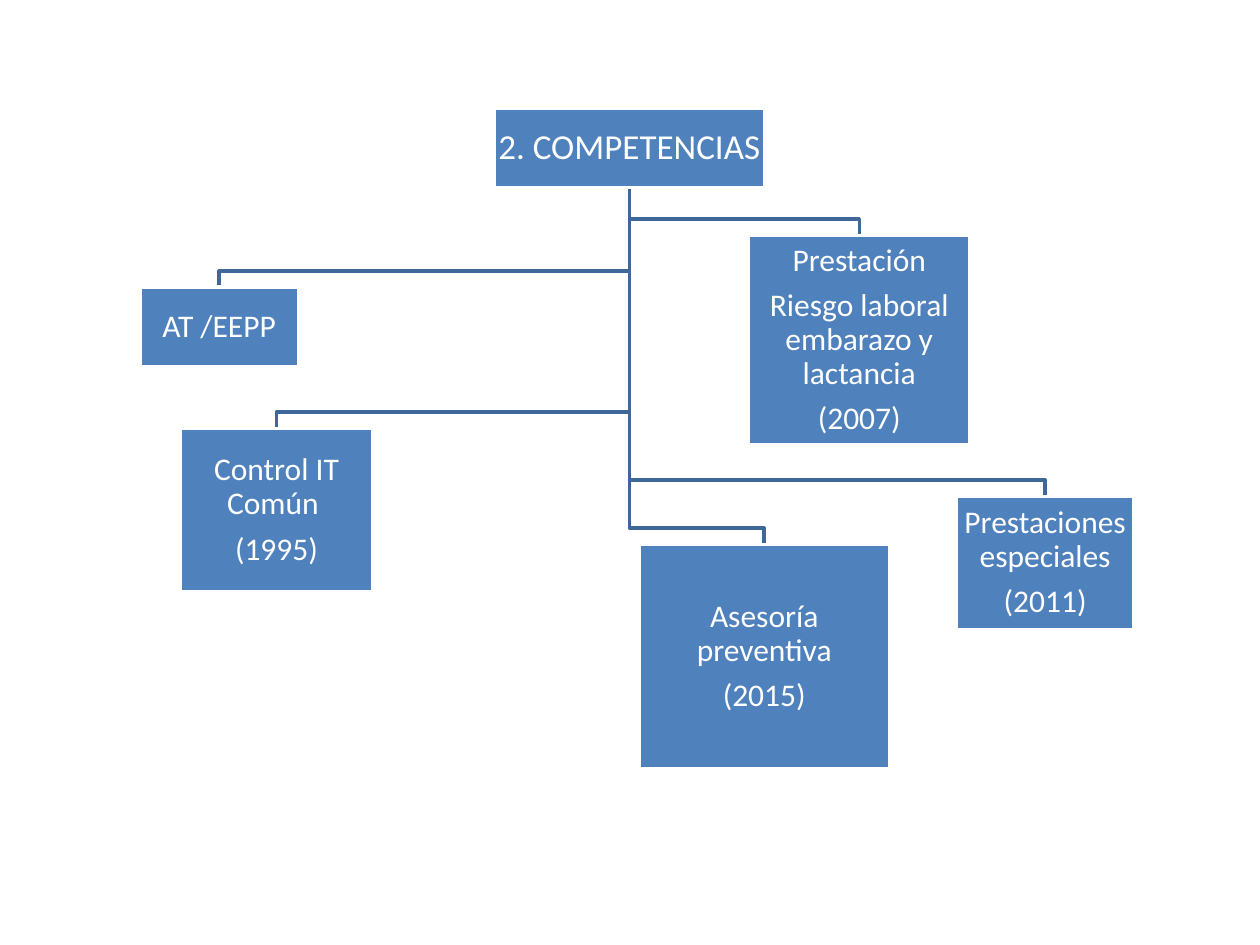
"""Build an organisation chart of competences branching from one heading."""
from dataclasses import dataclass

from pptx import Presentation
from pptx.dml.color import RGBColor
from pptx.enum.shapes import MSO_SHAPE
from pptx.enum.text import MSO_ANCHOR, PP_ALIGN
from pptx.shapes.autoshape import Shape
from pptx.slide import Slide
from pptx.util import Inches, Pt

RECT = MSO_SHAPE.RECTANGLE
MIDDLE = MSO_ANCHOR.MIDDLE
CENTER = PP_ALIGN.CENTER


@dataclass(frozen=True)
class Theme:
    font: str = "Calibri"
    fill: RGBColor = RGBColor(0x4F, 0x81, 0xBD)
    branch: RGBColor = RGBColor(0x3F, 0x67, 0x97)
    white: RGBColor = RGBColor(0xFF, 0xFF, 0xFF)
    heading_size: int = 20
    body_size: int = 18
    line_width: float = 2
    line_spacing: float = 0.9
    space_after: float = 0.35
    inset: float = 0.01
    drop: float = 0.13


@dataclass(frozen=True)
class Box:
    left: float
    top: float
    width: float
    height: float
    lines: tuple[str, ...]

    @property
    def center(self) -> float:
        return self.left + self.width / 2

    @property
    def bottom(self) -> float:
        return self.top + self.height


THEME = Theme()
ROOT = Box(3.92, 0.86, 2.15, 0.63, ("2. COMPETENCIAS ",))
CHILDREN = (
    Box(1.11, 2.28, 1.26, 0.63, ("AT /EEPP",)),
    Box(1.43, 3.4, 1.53, 1.3, ("Control IT Común ", "(1995)")),
    Box(5.94, 1.87, 1.76, 1.66,
        ("Prestación", "Riesgo laboral embarazo y lactancia", "(2007)")),
    Box(5.07, 4.32, 1.99, 1.78, ("Asesoría preventiva", "(2015)")),
    Box(7.59, 3.94, 1.41, 1.06, ("Prestaciones especiales", "(2011)")),
)


def write_text(s: Shape, lines: tuple[str, ...], *, size: int, color: RGBColor) -> None:
    tf = s.text_frame
    tf.word_wrap = True
    tf.vertical_anchor = MIDDLE
    tf.margin_left = tf.margin_right = Inches(THEME.inset)
    tf.margin_top = tf.margin_bottom = Inches(THEME.inset)
    for i, line in enumerate(lines):
        p = tf.add_paragraph() if i else tf.paragraphs[0]
        p.alignment = CENTER
        p.line_spacing = THEME.line_spacing
        p.space_after = Pt(size * THEME.space_after)
        r = p.add_run()
        r.text = line
        r.font.name = THEME.font
        r.font.size = Pt(size)
        r.font.color.rgb = color


def set_line(s: Shape, color: RGBColor) -> None:
    s.shadow.inherit = False
    s.line.color.rgb = color
    s.line.width = Pt(THEME.line_width)


def draw_box(slide: Slide, box: Box, size: int) -> None:
    s = slide.shapes.add_shape(
        RECT, Inches(box.left), Inches(box.top), Inches(box.width), Inches(box.height))
    s.fill.solid()
    s.fill.fore_color.rgb = THEME.fill
    set_line(s, THEME.white)
    write_text(s, box.lines, size=size, color=THEME.white)


def draw_branch(slide: Slide, parent: Box, child: Box) -> None:
    turn = child.top - THEME.drop
    points = [(Inches(x), Inches(y)) for x, y in (
        (parent.center, parent.bottom), (parent.center, turn),
        (child.center, turn), (child.center, child.top))]
    builder = slide.shapes.build_freeform(*points[0])
    builder.add_line_segments(points[1:], close=False)
    s = builder.convert_to_shape()
    s.fill.background()
    set_line(s, THEME.branch)


def main() -> None:
    prs = Presentation()
    prs.slide_width, prs.slide_height = Inches(10), Inches(7.5)
    slide = prs.slides.add_slide(prs.slide_layouts[6])
    for child in CHILDREN:
        draw_branch(slide, ROOT, child)
    draw_box(slide, ROOT, THEME.heading_size)
    for child in CHILDREN:
        draw_box(slide, child, THEME.body_size)
    prs.save("out.pptx")


if __name__ == "__main__":
    main()
